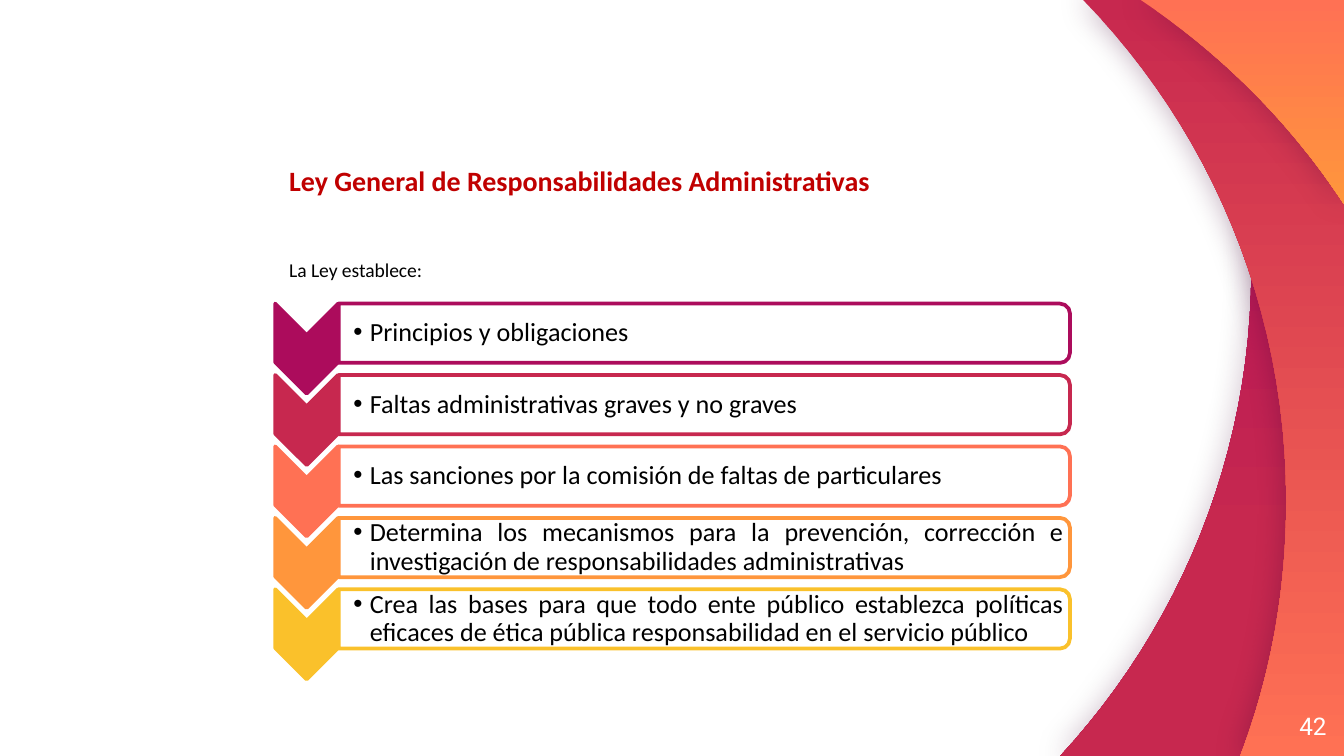
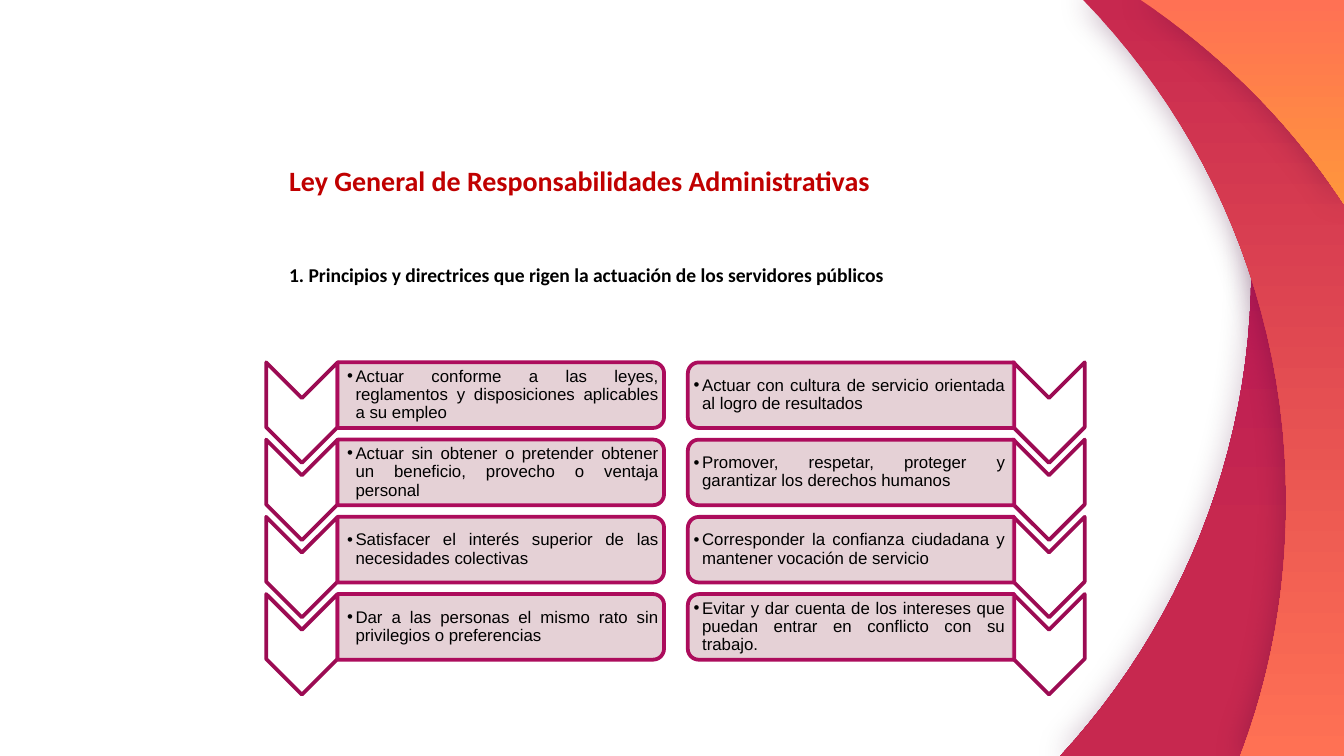
from lxml import etree
from pptx import Presentation
from pptx import util as u
from pptx.dml.color import RGBColor
from pptx.enum import shapes, text
from pptx.oxml import ns

PLUM = RGBColor(0xAC, 0x0C, 0x5C)
DARK_PLUM = RGBColor(0x9C, 0x0B, 0x53)
CRIMSON = RGBColor(0xC7, 0x28, 0x4F)
CORAL = RGBColor(0xFF, 0x71, 0x54)
ORANGE = RGBColor(0xFF, 0x96, 0x3C)
YELLOW = RGBColor(0xFA, 0xC1, 0x2B)
ROSE = RGBColor(0xE3, 0xCC, 0xD2)
RED = RGBColor(0xC0, 0x00, 0x00)
SHADOW = RGBColor(0x41, 0x04, 0x33)
BLACK = RGBColor(0, 0, 0)
WHITE = RGBColor(0xFF, 0xFF, 0xFF)

WIDTH, HEIGHT = 25.4, 14.29
LAW = "Ley General de Responsabilidades Administrativas"
HEADING_FRAME = {"word_wrap": True, "auto_size": text.MSO_AUTO_SIZE.NONE,
                 "vertical_anchor": text.MSO_ANCHOR.TOP}
HEADING_PARAGRAPH = {"alignment": text.PP_ALIGN.JUSTIFY, "line_spacing": 1.5,
                     "space_before": u.Pt(3.6)}
ITEM_PARAGRAPH = {"alignment": text.PP_ALIGN.JUSTIFY, "line_spacing": 0.9,
                  "space_before": u.Pt(0)}

BANDS = [
    ([(22.66, 0), (23.32, 1.63), (23.65, 3.33), (23.65, 5.08),
      (23.65, 8.64), (22.28, 11.86), (20.04, HEIGHT)], PLUM, CRIMSON, 0.72, 25),
    ([(20.47, 0), (22.86, 2.44), (24.31, 5.79), (24.31, 9.47),
      (24.31, 11.13), (24.03, 12.75), (23.44, HEIGHT)], CRIMSON, CORAL, 1, 35),
    ([(21.56, 0), (23.09, 1.02), (24.41, 2.34), (WIDTH, 3.86)], CORAL, ORANGE, 1, 30),
]

CONTENTS = [
    ("Principios y obligaciones", PLUM),
    ("Faltas administrativas graves y no graves", CRIMSON),
    ("Las sanciones por la comisión de faltas de particulares", CORAL),
    ("Determina los mecanismos para la prevención, corrección e investigación "
     "de responsabilidades administrativas", ORANGE),
    ("Crea las bases para que todo ente público establezca políticas eficaces "
     "de ética pública responsabilidad en el servicio público", YELLOW),
]
PRINCIPLES = [
    ("Actuar conforme a las leyes, reglamentos y disposiciones aplicables a su empleo",
     "Actuar con cultura de servicio orientada al logro de resultados"),
    ("Actuar sin obtener o pretender obtener un beneficio, provecho o ventaja personal",
     "Promover, respetar, proteger y garantizar los derechos humanos"),
    ("Satisfacer el interés superior de las necesidades colectivas",
     "Corresponder la confianza ciudadana y mantener vocación de servicio"),
    ("Dar a las personas el mismo rato sin privilegios o preferencias",
     "Evitar y dar cuenta de los intereses que puedan entrar en conflicto con su trabajo."),
]


def apply(target, values):
    for name, value in values.items():
        setattr(target, name, value)


def place(left, top, width, height):
    return {"left": u.Cm(left), "top": u.Cm(top), "width": u.Cm(width), "height": u.Cm(height)}


def add_xml(parent, tag, **attributes):
    return etree.SubElement(parent, ns.qn(tag), attributes)


def write(paragraph, words, color, paragraph_format, **font_format):
    run = paragraph.add_run()
    run.text = words
    apply(paragraph, paragraph_format)
    apply(run.font, font_format)
    run.font.color.rgb = color


def curve_points(controls, steps=24):
    points = [controls[0]]
    for start in range(0, len(controls) - 1, 3):
        segment = controls[start:start + 4]
        for step in range(1, steps + 1):
            t = step / steps
            weights = ((1 - t) ** 3, 3 * t * (1 - t) ** 2, 3 * t * t * (1 - t), t ** 3)
            points.append(tuple(sum(w * p[axis] for w, p in zip(weights, segment))
                                for axis in (0, 1)))
    return points


def add_band(slide, controls, upper, lower, end, opacity):
    outline = curve_points(controls) + [(WIDTH, controls[-1][1]), (WIDTH, 0)]
    points = [(u.Cm(x), u.Cm(y)) for x, y in outline]
    builder = slide.shapes.build_freeform(*points[0])
    builder.add_line_segments(points[1:], close=True)
    band = builder.convert_to_shape()
    band.line.fill.background()
    band.fill.gradient()
    band.fill.gradient_angle = 270
    for stop, color, position in zip(band.fill.gradient_stops, (upper, lower), (0, end)):
        stop.color.rgb = color
        stop.position = position
    band.shadow.inherit = False
    effects = band.element.spPr.find(ns.qn("a:effectLst"))
    glow = add_xml(effects, "a:outerShdw", blurRad=str(u.Pt(16.9)), dist="0", dir="0",
                   algn="ctr", rotWithShape="0")
    tint = add_xml(glow, "a:srgbClr", val=str(SHADOW))
    add_xml(tint, "a:alpha", val=str(opacity * 1000))
    return band


def move_bands_to_layout(slide):
    layout = slide.slide_layout
    for footer in list(layout.placeholders):
        if footer.placeholder_format.idx >= 10:
            layout.shapes.element.remove(footer.element)
    for band in [add_band(slide, *values) for values in BANDS]:
        layout.shapes.element.append(band.element)


def add_headings(slide, subheading, top, bold):
    title, body = slide.shapes.title, slide.placeholders[1]
    for heading, y, height, words, color, size, weight in (
            (title, 2.64, 1.5, LAW, RED, 15, True),
            (body, top, 0.9, subheading, BLACK, 10.5, bold)):
        apply(heading, place(5.21, y, 14.86, height))
        apply(heading.text_frame, HEADING_FRAME)
        write(heading.text_frame.paragraphs[0], words, color, HEADING_PARAGRAPH,
              size=u.Pt(size), name="Calibri", bold=weight)
    properties = body.text_frame.paragraphs[0]._p.get_or_add_pPr()
    apply_indent(properties, 0, 0)
    add_xml(properties, "a:buNone")


def apply_indent(properties, margin, indent):
    properties.set("marL", str(u.Cm(margin)))
    properties.set("indent", str(u.Cm(indent)))


def add_turned(slide, preset, left, top, width, height, rotation, fill, line):
    x, y = left + (width - height) / 2, top + (height - width) / 2
    turned = slide.shapes.add_shape(preset, u.Cm(x), u.Cm(y), u.Cm(height), u.Cm(width))
    turned.rotation = rotation
    turned.shadow.inherit = False
    turned.fill.solid()
    turned.fill.fore_color.rgb = fill
    turned.line.color.rgb = line
    turned.line.width = u.Pt(2)
    return turned


def add_box(slide, left, top, width, height, rotation, fill, line):
    box = add_turned(slide, shapes.MSO_SHAPE.ROUND_2_SAME_RECTANGLE,
                     left, top, width, height, rotation, fill, line)
    color = box.element.spPr.find(ns.qn("a:solidFill"))[0]
    add_xml(color, "a:alpha", val="90000")


def add_item(slide, words, left, top, width, height, margins, indent, **font_format):
    item = slide.shapes.add_textbox(u.Cm(left), u.Cm(top), u.Cm(width), u.Cm(height))
    frame = item.text_frame
    apply(frame, {"word_wrap": True, "vertical_anchor": text.MSO_ANCHOR.MIDDLE,
                  "margin_left": u.Cm(margins[0]), "margin_right": u.Cm(margins[1]),
                  "margin_top": u.Cm(0.03), "margin_bottom": u.Cm(0.03)})
    paragraph = frame.paragraphs[0]
    write(paragraph, words, BLACK, ITEM_PARAGRAPH, **font_format)
    properties = paragraph._p.get_or_add_pPr()
    apply_indent(properties, indent, -indent)
    add_xml(add_xml(properties, "a:buClr"), "a:srgbClr", val=str(BLACK))
    add_xml(properties, "a:buFont", typeface="Arial")
    add_xml(properties, "a:buChar", char="•")


def add_contents(slide):
    for row, (words, color) in enumerate(CONTENTS):
        top = 5.74 + row * 1.35
        add_turned(slide, shapes.MSO_SHAPE.CHEVRON, 5.2, top, 1.19, 1.7, 90, color, color)
        add_box(slide, 6.4, top, 13.82, 1.12, 90, WHITE, color)
        add_item(slide, words, 6.4, top + 0.06, 13.74, 1, (0.28, 0.03), 0.31,
                 size=u.Pt(14), name="Calibri")


def add_principles(slide):
    columns = [(5.03, 6.38, 6.38, 90, (0.18, 0.03)),
               (19.15, 13, 13.08, 270, (0.03, 0.18))]
    for column, (arrow_left, box_left, item_left, rotation, margins) in enumerate(columns):
        for row, principles in enumerate(PRINCIPLES):
            top = 6.85 + row * 1.46
            add_turned(slide, shapes.MSO_SHAPE.CHEVRON, arrow_left, top, 1.35, 1.9, 90,
                       WHITE, DARK_PLUM)
            add_box(slide, box_left, top, 6.17, 1.24, rotation, ROSE, PLUM)
            add_item(slide, principles[column], item_left, top + 0.06, 6.09, 1.12, margins,
                     0.16, size=u.Pt(9), name="Arial")


def add_page_number(slide, number):
    page = slide.shapes.add_textbox(u.Cm(23.55), u.Cm(13.18), u.Cm(1.52), u.Cm(1.09))
    apply(page.text_frame, {"word_wrap": True, "vertical_anchor": text.MSO_ANCHOR.MIDDLE,
                            "margin_left": 0, "margin_right": 0,
                            "margin_top": 0, "margin_bottom": 0})
    write(page.text_frame.paragraphs[0], number, WHITE,
          {"alignment": text.PP_ALIGN.RIGHT}, size=u.Pt(13), name="Roboto")


def main():
    deck = Presentation()
    apply(deck, {"slide_width": u.Cm(WIDTH), "slide_height": u.Cm(HEIGHT)})
    layout = deck.slide_layouts[1]

    contents = deck.slides.add_slide(layout)
    move_bands_to_layout(contents)
    add_page_number(contents, "42")
    add_headings(contents, "La Ley establece:", 4.52, False)
    add_contents(contents)

    principles = deck.slides.add_slide(layout)
    add_headings(principles, "1. Principios y directrices que rigen la actuación "
                 "de los servidores públicos", 4.62, True)
    add_principles(principles)

    deck.save("out.pptx")


if __name__ == "__main__":
    main()
